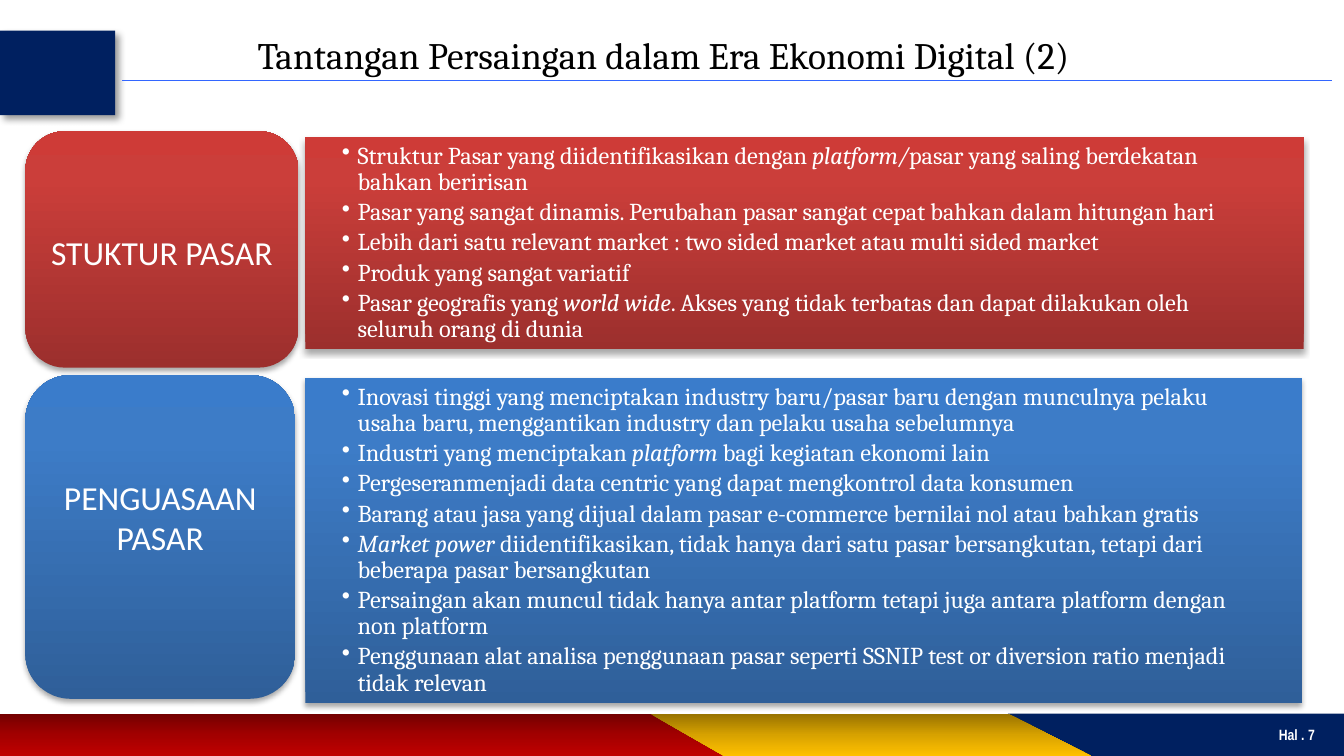
import pptx
import pptx.dml.color
import pptx.enum.shapes
import pptx.enum.text
import pptx.oxml.ns
import pptx.util
import lxml.etree

Cm, Pt = pptx.util.Cm, pptx.util.Pt
qn = pptx.oxml.ns.qn
Kind = pptx.enum.shapes.MSO_SHAPE
Mid = pptx.enum.text.MSO_ANCHOR.MIDDLE
Top = pptx.enum.text.MSO_ANCHOR.TOP
Left = pptx.enum.text.PP_ALIGN.LEFT
Center = pptx.enum.text.PP_ALIGN.CENTER

# Content: *...* marks italics
TITLE = "Tantangan Persaingan dalam Era Ekonomi Digital (2)"
PAGE = "Hal . 7"
RED = [(0, "9C2F2D"), (80, "CB3E3A"), (100, "CE3B37")]
BLUE = [(0, "2F5F99"), (80, "3D7CC7"), (100, "3A7CCB")]
TOPICS = [
    {
        "name": "STUKTUR PASAR", "fill": RED,
        "label": (0.48, 2.48, 5.16, 4.47), "box": (5.77, 2.59, 18.87, 4.01),
        "points": [
            "Struktur Pasar yang diidentifikasikan dengan *platform/*pasar yang saling berdekatan bahkan beririsan",
            "Pasar yang sangat dinamis. Perubahan pasar sangat cepat bahkan dalam hitungan hari",
            "Lebih dari satu relevant market : two sided market atau multi sided market",
            "Produk yang sangat variatif",
            "Pasar geografis yang *world wide*. Akses yang tidak terbatas dan dapat dilakukan oleh seluruh orang di dunia",
        ],
    },
    {
        "name": "PENGUASAAN PASAR", "fill": BLUE,
        "label": (0.48, 7.09, 5.1, 6.12), "box": (5.77, 7.14, 18.84, 6.15),
        "points": [
            "Inovasi tinggi yang menciptakan industry baru/pasar baru dengan munculnya pelaku usaha baru, menggantikan industry dan pelaku usaha sebelumnya",
            "Industri yang menciptakan *platform *bagi kegiatan ekonomi lain",
            "Pergeseranmenjadi data centric yang dapat mengkontrol data konsumen",
            "Barang atau jasa yang dijual dalam pasar e-commerce bernilai nol atau bahkan gratis",
            "*Market power *diidentifikasikan, tidak hanya dari satu pasar bersangkutan, tetapi dari beberapa pasar bersangkutan",
            "Persaingan akan muncul tidak hanya antar platform tetapi juga antara platform dengan non platform",
            "Penggunaan alat analisa penggunaan pasar seperti SSNIP test or diversion ratio menjadi tidak relevan",
        ],
    },
]
# Footer ribbons: top left, top right, bottom right, bottom left
NAVY = "002060"
RIBBONS = [
    ((19.05, 25.4, 25.4, 20.62), NAVY),
    ((0, 12.37, 13.69, 0), [(0, "720000"), (50, "A20000"), (100, "C00000")]),
    ((12.29, 19.05, 20.62, 13.69), [(0, "977200"), (50, "D7A200"), (100, "FFC000")]),
]
WIDE, HIGH, FOOT = 25.4, 14.29, 13.49

deck = pptx.Presentation()
deck.slide_width, deck.slide_height = Cm(WIDE), Cm(HIGH)
slide = deck.slides.add_slide(deck.slide_layouts[6])
shapes = slide.shapes


def rgb(code):
    return pptx.dml.color.RGBColor.from_string(code)


def add(parent, tag, **attrs):
    node = lxml.etree.SubElement(parent, qn(tag))
    for key, val in attrs.items():
        node.set(key, str(val))
    return node


def paint(shape, fill, angle=90):
    """Fill with one colour or a list of gradient stops; no line or shadow."""
    shape.shadow.inherit = False
    shape.line.fill.background()
    if isinstance(fill, str):
        shape.fill.solid()
        shape.fill.fore_color.rgb = rgb(fill)
        return
    shape.fill.gradient()
    shape.fill.gradient_angle = angle
    stops = shape._element.spPr.find(".//" + qn("a:gsLst"))
    for old in list(stops):
        stops.remove(old)
    for pos, code in fill:
        add(add(stops, "a:gs", pos=pos * 1000), "a:srgbClr", val=code)


def shade(shape, alpha, blur, dist, angle):
    effect = shape._element.spPr.find(qn("a:effectLst"))
    outer = add(effect, "a:outerShdw", blurRad=Pt(blur), dist=Pt(dist),
                dir=angle * 60000, algn="tl", rotWithShape=0)
    add(add(outer, "a:srgbClr", val="000000"), "a:alpha", val=alpha * 1000)


def style(para, face, size, code, align=Center, bold=False):
    para.alignment = align
    for run in para.runs:
        font = run.font
        font.name, font.size, font.bold = face, Pt(size), bold
        font.color.rgb = rgb(code)


def panel(kind, spot, fill):
    shape = shapes.add_shape(kind, *map(Cm, spot))
    paint(shape, fill)
    return shape


def write(spot, text, *look, bold=False):
    frame = shapes.add_textbox(*map(Cm, spot)).text_frame
    frame.word_wrap, frame.vertical_anchor = True, Mid
    frame.text = text
    style(frame.paragraphs[0], *look, bold=bold)


def bullet(para, text):
    props = para._p.get_or_add_pPr()
    props.set("marL", str(Cm(0.3)))
    props.set("indent", str(-Cm(0.3)))
    add(props, "a:buChar", char="•")
    para.line_spacing, para.space_after = 0.9, Pt(2.1)
    for num, part in enumerate(text.split("*")):
        if part:
            run = para.add_run()
            run.text = part
            run.font.italic = num % 2 == 1
    style(para, "Cambria", 13, "FFFFFF", Left)


# Corner block and footer
shade(panel(Kind.RECTANGLE, (0, 0.58, 2.18, 1.6), NAVY), 40, 4, 3, 45)
for xs, fill in RIBBONS:
    dots = [(Cm(x), Cm(y)) for x, y in zip(xs, (FOOT, FOOT, HIGH, HIGH))]
    form = shapes.build_freeform(*dots[0])
    form.add_line_segments(dots[1:], close=True)
    paint(form.convert_to_shape(), fill, 270)
write((23.62, FOOT, 1.78, 0.8), PAGE, "Arial Narrow", 8, "FFFFFF", bold=True)

# Topics: bullet box and rounded label
for topic in TOPICS:
    box = panel(Kind.RECTANGLE, topic["box"], topic["fill"])
    label = panel(Kind.ROUNDED_RECTANGLE, topic["label"], topic["fill"])
    for shape in (box, label):
        shade(shape, 35, 3.1, 1.8, 90)

    frame = box.text_frame
    frame.word_wrap, frame.vertical_anchor = True, Mid
    frame.margin_left = frame.margin_right = Cm(0.69)
    frame.margin_top = frame.margin_bottom = Cm(0.36)
    for num, text in enumerate(topic["points"]):
        bullet(frame.add_paragraph() if num else frame.paragraphs[0], text)

    frame = label.text_frame
    frame.word_wrap, frame.vertical_anchor = True, Top
    frame.margin_top = Cm(1.68)
    frame.text = topic["name"]
    style(frame.paragraphs[0], "Calibri", 18, "FFFFFF")

# Title and rule
rule = shapes.add_connector(pptx.enum.shapes.MSO_CONNECTOR.STRAIGHT,
                            Cm(2.31), Cm(1.52), Cm(25.17), Cm(1.52))
rule.line.color.rgb, rule.line.width = rgb("3366FF"), Pt(0.5)
add(rule._element.spPr, "a:effectLst")
write((2.18, 0.15, 20.73, 1.75), TITLE, "Cambria", 20, "000000")

deck.save("out.pptx")
